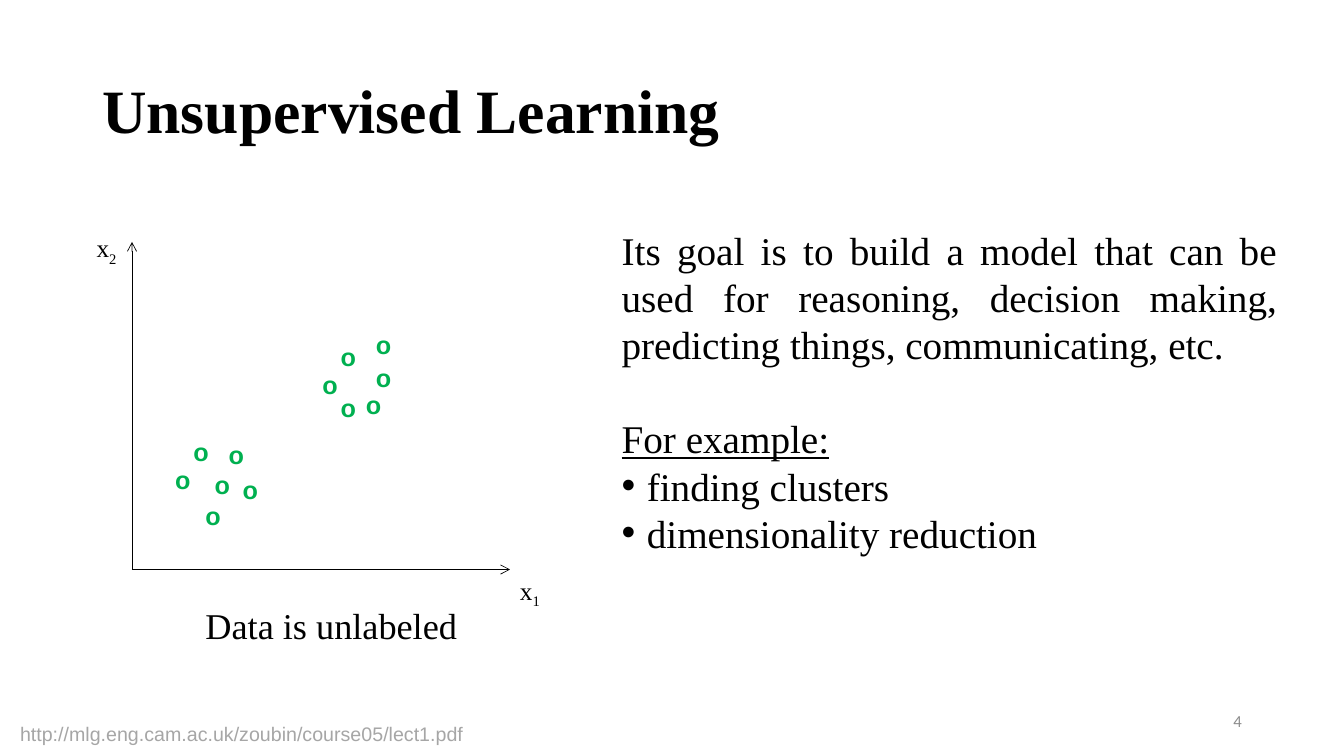
"""Build the Unsupervised Learning slide with a two-cluster scatter sketch."""
import pptx
import pptx.util
import pptx.dml.color
import pptx.enum.shapes
import pptx.enum.text
from lxml import etree

Pt = pptx.util.Pt
ALIGN = pptx.enum.text.PP_ALIGN
ANCHOR = pptx.enum.text.MSO_ANCHOR
SERIF = "Times New Roman"
COLORS = {"black": "000000", "green": "00B050", "source": "A6A6A6", "number": "8C8C8C"}

prs = pptx.Presentation()
prs.slide_width, prs.slide_height = Pt(960), Pt(540)
s = prs.slides.add_slide(prs.slide_layouts[6])


def add_text(text, left, top, width, height, size=18, font=SERIF, color="black",
             bold=False, wrap=False, anchor=ANCHOR.TOP, align=ALIGN.LEFT,
             spacing=None, subscript=""):
    """Add a text box and return its text frame."""
    tf = s.shapes.add_textbox(Pt(left), Pt(top), Pt(width), Pt(height)).text_frame
    tf.word_wrap = wrap
    tf.vertical_anchor = anchor
    tf.text = text
    if subscript:
        r = tf.paragraphs[0].add_run()
        r.text = subscript
        r.font._element.set("baseline", "-25000")
    for p in tf.paragraphs:
        p.alignment = align
        p.line_spacing = spacing
        for r in p.runs:
            r.font.size = Pt(size)
            r.font.name = font
            r.font.bold = bold
            r.font.color.rgb = pptx.dml.color.RGBColor.from_string(COLORS[color])
    return tf


add_text("Unsupervised Learning", 66, 28.8, 828, 104.4, size=44, bold=True,
         wrap=True, anchor=ANCHOR.MIDDLE, spacing=0.9)

origin_x, origin_y = 94.3, 406.8
for end_x, end_y in [(origin_x, 172.8), (364.3, origin_y)]:
    axis = s.shapes.add_connector(pptx.enum.shapes.MSO_CONNECTOR.STRAIGHT,
                                  Pt(origin_x), Pt(origin_y), Pt(end_x), Pt(end_y))
    axis.line.width = Pt(0.5)
    axis.line.color.rgb = pptx.dml.color.RGBColor.from_string(COLORS["black"])
    ln = axis.line._get_or_add_ln()
    etree.SubElement(ln, pptx.oxml.ns.qn("a:tailEnd"), type="arrow")
    etree.SubElement(axis._element.spPr, pptx.oxml.ns.qn("a:effectLst"))

add_text("x", 61.9, 162.7, 29.5, 28.8, subscript="2")
add_text("x", 364.3, 407.5, 29.5, 28.8, subscript="1")

lower_cluster = [(166.3, 335.5), (118.1, 328.3), (131, 308.2),
                 (139.7, 353.5), (146.2, 331.9), (156.2, 310.3)]
upper_cluster = [(254.2, 274.3), (223.2, 260.6), (236.2, 240.5),
                 (236.2, 276.5), (261.4, 231.8), (261.4, 255.6)]
for left, top in lower_cluster + upper_cluster:
    add_text("o", left, top, 25.9, 28.8, font="Arial", color="green", bold=True)

add_text("Data is unlabeled", 139.7, 427, 201.6, 46.8, size=25.9, wrap=True)

goal = ("Its goal is to build a model that can be used for reasoning, "
        "decision making, predicting things, communicating, etc.")
body = add_text("\n".join([goal, "For example:", "finding clusters", "dimensionality reduction"]),
                437, 158.4, 482.4, 294.5, size=28, wrap=True,
                align=ALIGN.JUSTIFY, spacing=Pt(33.6))
example, *bullets = body.paragraphs[1:]
example.space_before = Pt(33.6)
example.runs[0].font.underline = True
for p in bullets:
    pPr = p._p.get_or_add_pPr()
    pPr.set("marL", str(Pt(18)))
    pPr.set("indent", str(-Pt(18)))
    etree.SubElement(pPr, pptx.oxml.ns.qn("a:buFont"), typeface="Arial")
    etree.SubElement(pPr, pptx.oxml.ns.qn("a:buChar"), char="•")

add_text("http://mlg.eng.cam.ac.uk/zoubin/course05/lect1.pdf", 7.2, 511.9, 332.6, 24.5,
         size=14, font="Arial", color="source")
add_text("4", 678.2, 500.4, 216, 28.8, size=12, font="Calibri", color="number",
         wrap=True, anchor=ANCHOR.MIDDLE, align=ALIGN.RIGHT)

prs.save("out.pptx")
